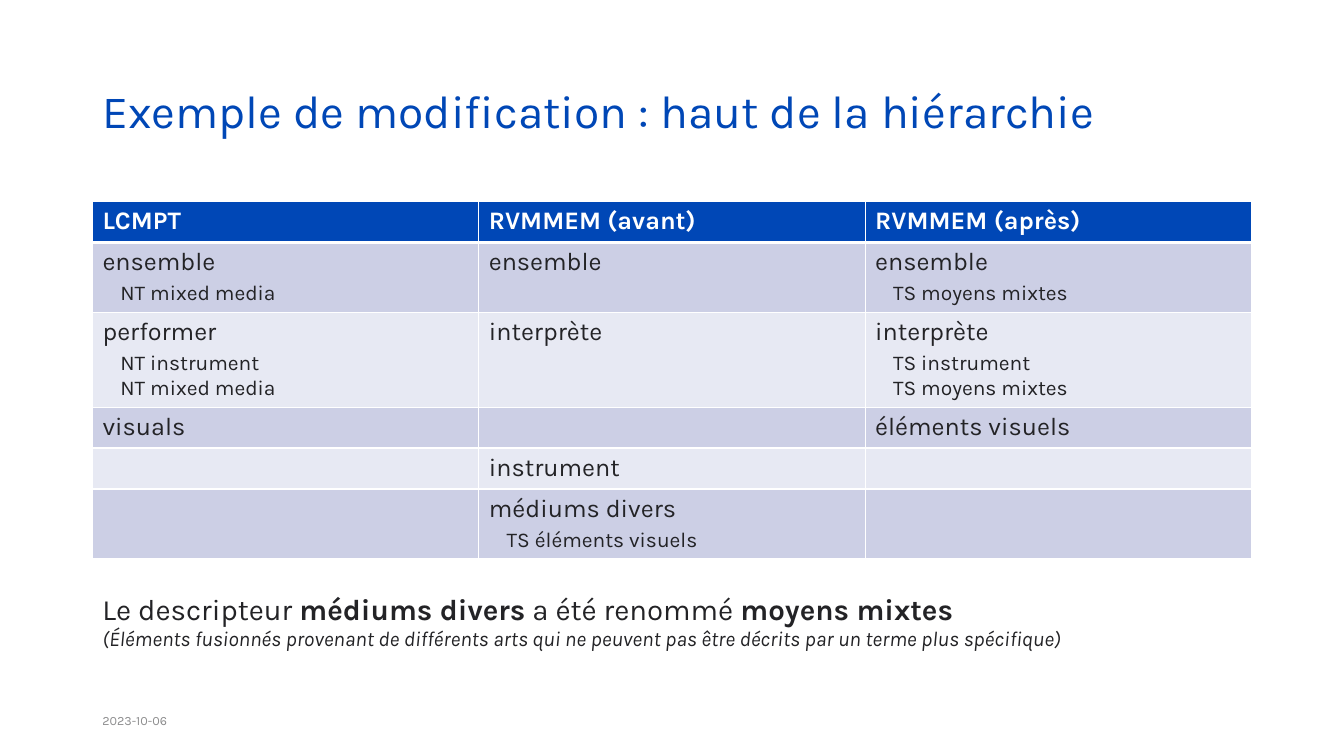
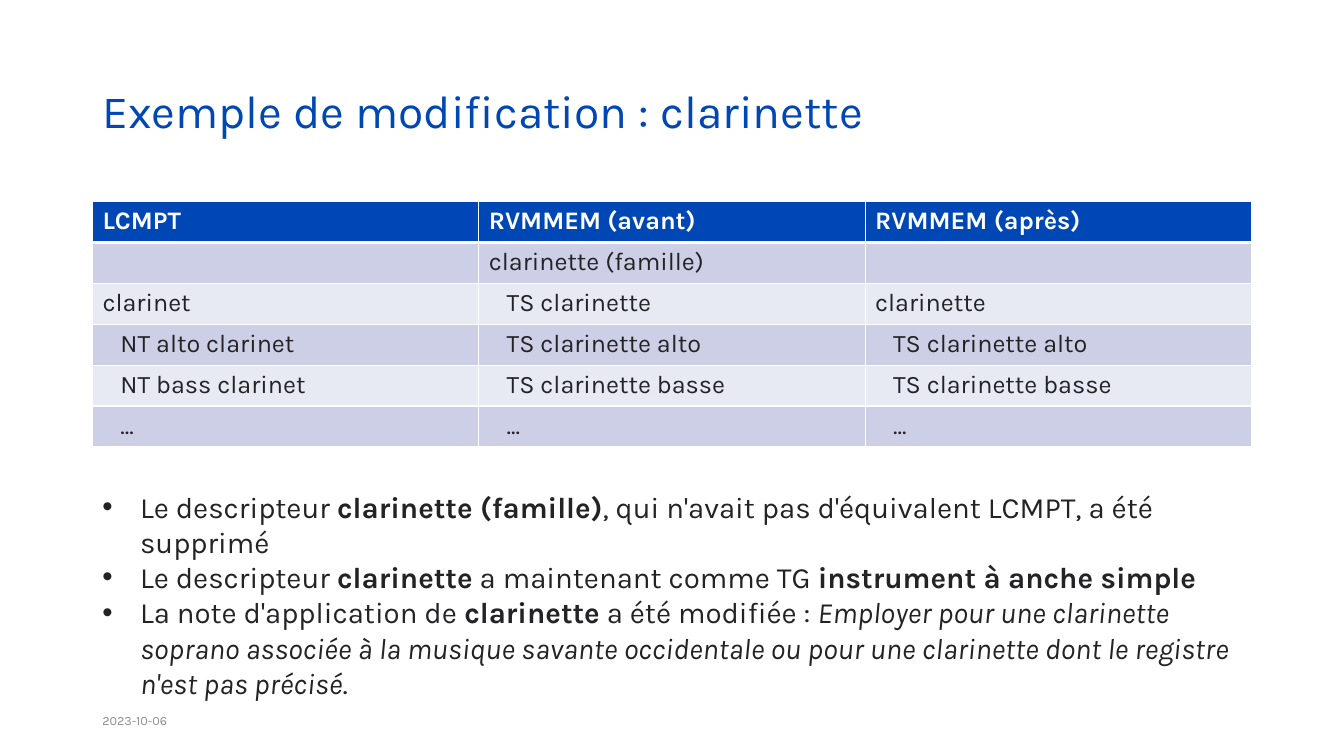
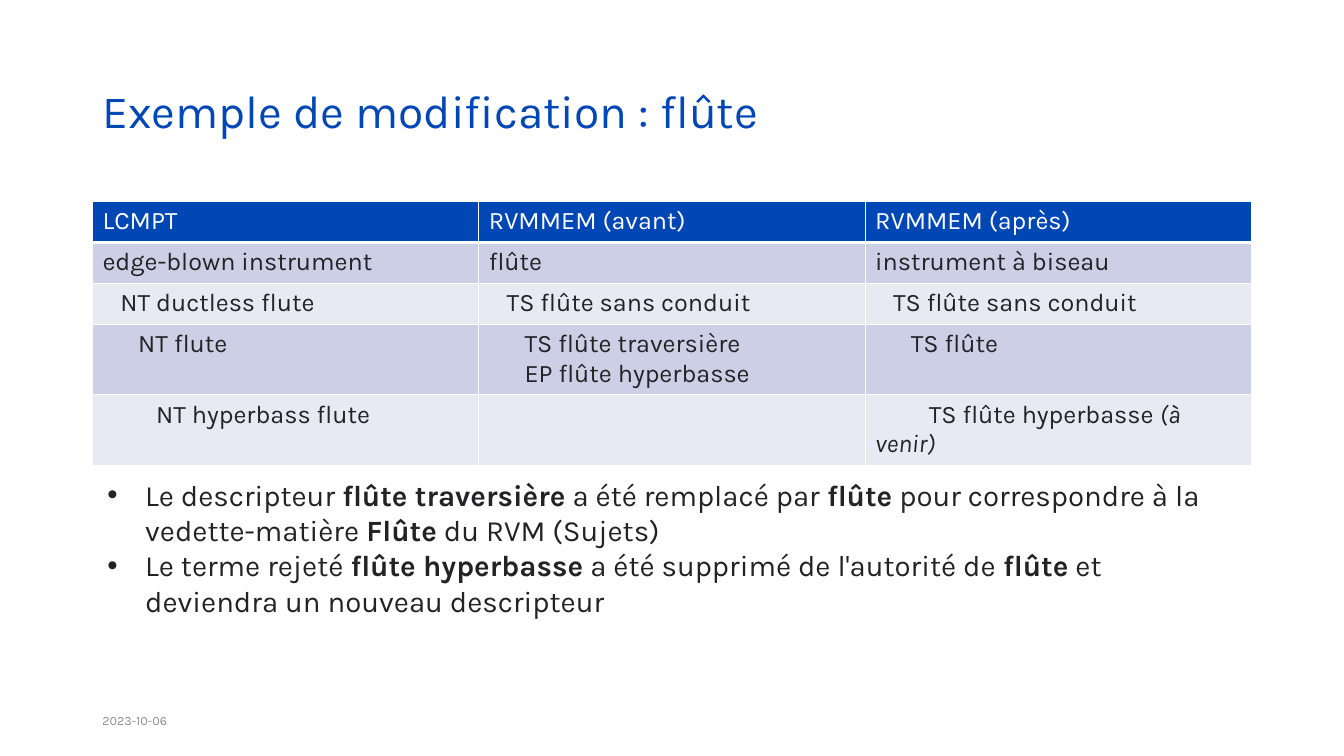
from lxml import etree
from pptx import Presentation
from pptx import util as u
from pptx.dml import color
from pptx.enum import text
from pptx.oxml import ns

COLORS = {"blue": "0047B6", "ink": "232326", "gray": "8D8D8E", "white": "FFFFFF",
          "band_dark": "CCCFE5", "band_light": "E7E9F3"}
FONT = "Karla"
LEFT, WIDTH = 2.33, 29.21
STEP = 0.45  # indent of one level of the hierarchy
LINE, TWO_LINES, THREE_LINES = 1.03, 1.74, 2.37  # row heights
HEADER = ["LCMPT", "RVMMEM (avant)", "RVMMEM (après)"]

# In cells, each leading ">" is one level down the hierarchy.
# In all texts, "|" parts the runs; "*" opens a bold run and "/" an italic one.
slides = [
    {
        "title": "Exemple de modification : haut de la hiérarchie",
        "header_bold": True, "narrower_size": 15,
        "rows": [
            (TWO_LINES, [["ensemble", ">NT mixed media"], ["ensemble"],
                         ["ensemble", ">TS moyens mixtes"]]),
            (THREE_LINES, [["performer", ">NT instrument", ">NT mixed media"], ["interprète"],
                           ["interprète", ">TS instrument", ">TS moyens mixtes"]]),
            (LINE, [["visuals"], [], ["éléments visuels"]]),
            (LINE, [[], ["instrument"], []]),
            (TWO_LINES, [[], ["médiums divers", ">TS éléments visuels"], []]),
        ],
        "notes_box": (LEFT, 14.76, WIDTH, 1.8), "bullets": False,
        "notes": [
            (21, "Le descripteur |*médiums divers| a été renommé |*moyens mixtes"),
            (15, "/(Éléments fusionnés provenant de différents arts qui ne peuvent pas "
                 "être décrits par un terme plus spécifique)"),
        ],
    },
    {
        "title": "Exemple de modification : clarinette",
        "header_bold": True, "narrower_size": 18,
        "rows": [
            (LINE, [[], ["clarinette (famille)"], []]),
            (LINE, [["clarinet"], [">TS clarinette"], ["clarinette"]]),
            (LINE, [[">NT alto clarinet"], [">TS clarinette alto"], [">TS clarinette alto"]]),
            (LINE, [[">NT bass clarinet"], [">TS clarinette basse"], [">TS clarinette basse"]]),
            (LINE, [[">..."]] * 3),
        ],
        "notes_box": (LEFT, 12.19, WIDTH, 5.64), "bullets": True,
        "notes": [
            (21, "Le descripteur |*clarinette (famille)|, qui n'avait pas d'équivalent LCMPT, "
                 "a été supprimé"),
            (21, "Le descripteur |*clarinette| a maintenant comme TG |*instrument à anche simple"),
            (21, "La note d'application de |*clarinette| a été modifiée : |/Employer pour une "
                 "clarinette soprano associée à la musique savante occidentale ou pour une "
                 "clarinette dont le registre n'est pas précisé|."),
        ],
    },
    {
        "title": "Exemple de modification : flûte",
        "header_bold": False, "narrower_size": 18,
        "rows": [
            (LINE, [["edge-blown instrument"], ["flûte"], ["instrument à biseau"]]),
            (LINE, [[">NT ductless flute"], [">TS flûte sans conduit"],
                    [">TS flûte sans conduit"]]),
            (TWO_LINES, [[">>NT flute"], [">>TS flûte traversière", ">>EP flûte hyperbasse"],
                         [">>TS flûte"]]),
            (TWO_LINES, [[">>>NT hyperbass flute"], [],
                         [">>>TS flûte hyperbasse |/(à venir)"]]),
        ],
        "notes_box": (2.46, 11.89, 29.06, 3.84), "bullets": True,
        "notes": [
            (21, "Le descripteur |*flûte traversière| a été remplacé par |*flûte| pour "
                 "correspondre à la vedette-matière |*Flûte| du RVM (Sujets)"),
            (21, "Le terme rejeté |*flûte hyperbasse| a été supprimé de l'autorité de |*flûte| "
                 "et deviendra un nouveau descripteur"),
        ],
    },
]


def write(paragraph, marked, size, ink, bold=False):
    """Write marked text as runs in the shared font."""
    for part in marked.split("|"):
        run = paragraph.add_run()
        run.text = part.lstrip("*/")
        run.font.name, run.font.size = FONT, u.Pt(size)
        run.font.bold = bold or part.startswith("*")
        run.font.italic = part.startswith("/")
        run.font.color.rgb = color.RGBColor.from_string(COLORS[ink])


def add_frame(slide, box, anchor=text.MSO_ANCHOR.TOP):
    """Add a wrapping text box and return its text frame."""
    frame = slide.shapes.add_textbox(*map(u.Cm, box)).text_frame
    frame.word_wrap = True
    frame.vertical_anchor = anchor
    return frame


prs = Presentation()
prs.slide_width, prs.slide_height = u.Cm(33.87), u.Cm(19.05)

for content in slides:
    slide = prs.slides.add_slide(prs.slide_layouts[6])

    # Title
    title = add_frame(slide, (LEFT, 1.01, WIDTH, 3.68), text.MSO_ANCHOR.MIDDLE).paragraphs[0]
    title.line_spacing = 0.9
    write(title, content["title"], 33, "blue")

    # Comparison table
    rows = [(LINE, [[name] for name in HEADER])] + content["rows"]
    height = sum(row_height for row_height, _ in rows)
    comparison = slide.shapes.add_table(len(rows), len(HEADER), u.Cm(LEFT), u.Cm(5.08),
                                        u.Cm(WIDTH), u.Cm(height)).table
    for column in comparison.columns:
        column.width = u.Cm(WIDTH / len(HEADER))
    for r, (row_height, entries) in enumerate(rows):
        comparison.rows[r].height = u.Cm(row_height)
        for c, lines in enumerate(entries):
            cell = comparison.cell(r, c)

            # White borders, thicker under the header
            borders = cell._tc.get_or_add_tcPr()
            for side in ("lnL", "lnR", "lnT", "lnB"):
                thick = (r, side) in ((0, "lnB"), (1, "lnT"))
                border = etree.SubElement(borders, ns.qn(f"a:{side}"),
                                          w=str(u.Pt(3 if thick else 1)))
                fill = etree.SubElement(border, ns.qn("a:solidFill"))
                etree.SubElement(fill, ns.qn("a:srgbClr"), val=COLORS["white"])

            band = "blue" if r == 0 else "band_dark" if r % 2 else "band_light"
            cell.fill.solid()
            cell.fill.fore_color.rgb = color.RGBColor.from_string(COLORS[band])

            for i, line in enumerate(lines):
                entry = cell.text_frame.paragraphs[0] if i == 0 else cell.text_frame.add_paragraph()
                term = line.lstrip(">")
                level = len(line) - len(term)
                size = content["narrower_size"] if level else 18
                if level:
                    entry._p.get_or_add_pPr().set("indent", str(u.Cm(STEP * level)))
                if i == 1 and size < 18:
                    entry.space_before = u.Pt(3)
                write(entry, term, size, "ink" if r else "white",
                      bold=r == 0 and content["header_bold"])

    # Date
    date = add_frame(slide, (LEFT, 17.66, 7.62, 1.01), text.MSO_ANCHOR.MIDDLE)
    write(date.paragraphs[0], "2023-10-06", 9, "gray")

    # Explanations under the table
    notes = add_frame(slide, content["notes_box"])
    for i, (size, sentence) in enumerate(content["notes"]):
        note = notes.paragraphs[0] if i == 0 else notes.add_paragraph()
        if content["bullets"]:
            layout = note._p.get_or_add_pPr()
            layout.set("marL", str(u.Cm(0.95)))
            layout.set("indent", str(-u.Cm(0.95)))
            etree.SubElement(layout, ns.qn("a:buFont"), typeface="Arial")
            etree.SubElement(layout, ns.qn("a:buChar"), char="•")
        write(note, sentence, size, "ink")

prs.save("out.pptx")
